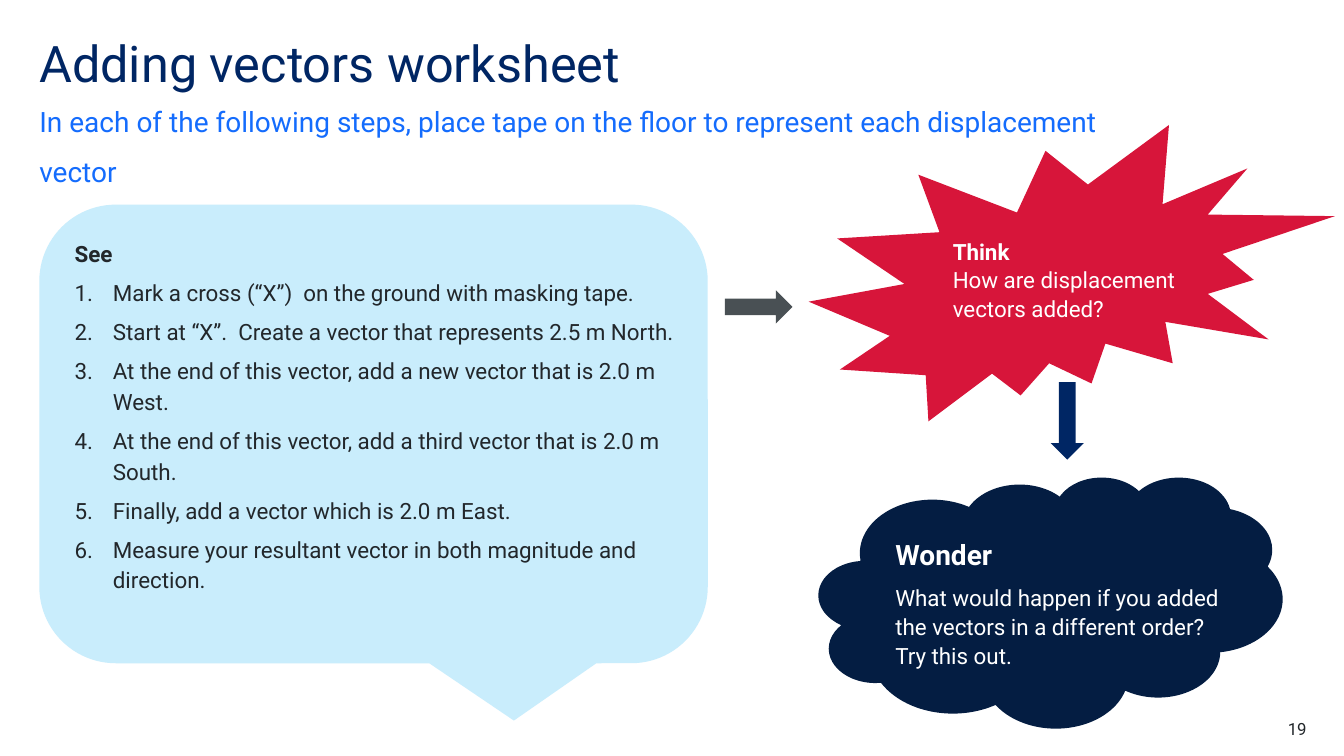
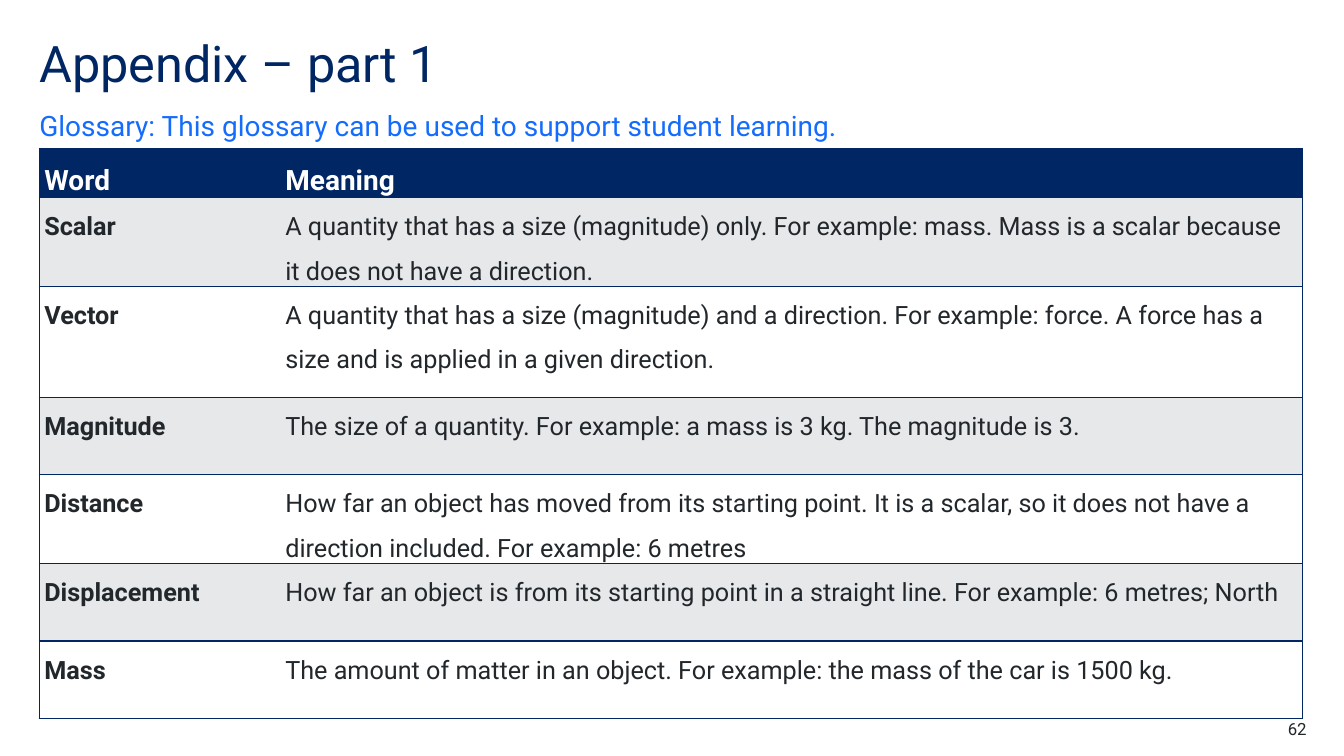
"""Build a vectors worksheet slide and a glossary slide."""
from lxml import etree
from pptx import Presentation
from pptx import util as u
from pptx.dml.color import RGBColor
from pptx.enum import shapes, text
from pptx.oxml import ns

PIXEL = 9144
FONT = "Roboto"
NAVY, BLUE, INK, WHITE = "002664", "146CFD", "22272B", "FFFFFF"
SKY, RED, MIDNIGHT, SLATE, GREY = "C9EDFC", "D7153A", "041D42", "495054", "E7E8EA"

STEPS = [
    "Mark a cross (“X”)  on the ground with masking tape.",
    "Start at “X”.  Create a vector that represents 2.5 m North.",
    "At the end of this vector, add a new vector that is 2.0 m West.",
    "At the end of this vector, add a third vector that is 2.0 m South.",
    "Finally, add a vector which is 2.0 m East.",
    "Measure your resultant vector in both magnitude and direction.",
]
GLOSSARY = [
    ("Word", "Meaning", 49),
    ("Scalar", "A quantity that has a size (magnitude) only. For example: mass. "
     "Mass is a scalar because it does not have a direction.", 88),
    ("Vector", "A quantity that has a size (magnitude) and a direction. For example: force. "
     "A force has a size and is applied in a given direction.", 110),
    ("Magnitude", "The size of a quantity. For example: a mass is 3 kg. The magnitude is 3.", 77),
    ("Distance", "How far an object has moved from its starting point. It is a scalar, "
     "so it does not have a direction included. For example: 6 metres", 88),
    ("Displacement", "How far an object is from its starting point in a straight line. "
     "For example: 6 metres; North", 77),
    ("Mass", "The amount of matter in an object. For example: the mass of the car is 1500 kg.", 77),
]


def px(length):
    """Turn px into EMU."""
    return u.Emu(length * PIXEL)


def place(box):
    """Turn a px box into EMU lengths."""
    return [px(length) for length in box]


def color(value):
    """Turn a hex string into a colour."""
    return RGBColor.from_string(value)


def paint(shape, fill):
    """Give a shape or cell a plain fill."""
    shape.fill.solid()
    shape.fill.fore_color.rgb = color(fill)


def prepare_frame(frame, anchor=text.MSO_ANCHOR.TOP):
    """Give a text frame no margins, wrapping and a fixed size."""
    frame.margin_left = frame.margin_right = frame.margin_top = frame.margin_bottom = 0
    frame.word_wrap = True
    frame.auto_size = text.MSO_AUTO_SIZE.NONE
    frame.vertical_anchor = anchor


def write(paragraph, content, size, ink, bold=False, line=1.0, after=0,
          align=text.PP_ALIGN.LEFT):
    """Fill a paragraph with one formatted run."""
    paragraph.alignment = align
    paragraph.line_spacing = line
    paragraph.space_before = u.Pt(0)
    paragraph.space_after = u.Pt(after)
    run = paragraph.add_run()
    run.text = content
    run.font.name = FONT
    run.font.size = u.Pt(size)
    run.font.bold = bold
    run.font.color.rgb = color(ink)


def set_bullet(paragraph, kind, indent=0, **attributes):
    """Set the hanging indent and the bullet element of a paragraph."""
    properties = paragraph._p.get_or_add_pPr()
    properties.set("marL", str(px(indent)))
    properties.set("indent", str(px(-indent)))
    etree.SubElement(properties, ns.qn(kind), attributes)


def add_text_box(parent, box, paragraphs):
    """Add a text box with paragraphs given as write options."""
    frame = parent.shapes.add_textbox(*place(box)).text_frame
    prepare_frame(frame)
    for index, options in enumerate(paragraphs):
        paragraph = frame.paragraphs[0] if index == 0 else frame.add_paragraph()
        options = dict(options)
        if options.pop("numbered", False):
            set_bullet(paragraph, "a:buAutoNum", 38, type="arabicPeriod")
        write(paragraph, **options)


def add_shape(parent, kind, box, fill):
    """Add a filled shape without line or shadow."""
    shape = parent.shapes.add_shape(kind, *place(box))
    paint(shape, fill)
    shape.line.fill.background()
    shape.shadow.inherit = False
    return shape


def add_base(presentation, title, subtitle, subtitle_box, number):
    """Add a slide with its title, subtitle and number."""
    slide = presentation.slides.add_slide(presentation.slide_layouts[1])
    heading, body = slide.placeholders
    heading.left, heading.top, heading.width, heading.height = place((39, 39, 1102, 60))
    prepare_frame(heading.text_frame)
    write(heading.text_frame.paragraphs[0], title, 36, NAVY, line=0.9)
    body.left, body.top, body.width, body.height = place(subtitle_box)
    prepare_frame(body.text_frame, text.MSO_ANCHOR.BOTTOM)
    paragraph = body.text_frame.paragraphs[0]
    set_bullet(paragraph, "a:buNone")
    write(paragraph, subtitle, 20, BLUE, line=1.5, after=12)
    add_text_box(slide, (1217, 713, 79, 20), [
        dict(content=number, size=12, ink=INK, align=text.PP_ALIGN.RIGHT)])
    return slide


def add_bubble(slide, kind, box, fill, inset, paragraphs, adjustments=()):
    """Add a grouped shape and text, with the text box inset in the shape's box."""
    group = slide.shapes.add_group_shape()
    shape = add_shape(group, kind, box, fill)
    for index, value in enumerate(adjustments):
        shape.adjustments[index] = value
    left, top, width, height = inset
    add_text_box(group, (box[0] + left, box[1] + top, width, height), paragraphs)


def add_worksheet(presentation):
    """Add the slide that leads from See through Think to Wonder."""
    slide = add_base(presentation, "Adding vectors worksheet",
                     "In each of the following steps, place tape on the floor "
                     "to represent each displacement vector", (39, 108, 1102, 79), "19")
    kinds = shapes.MSO_SHAPE
    see = dict(size=16, ink=INK, line=1.14, after=6)
    note = dict(size=16, ink=WHITE, line=1.07)
    add_bubble(slide, kinds.ROUNDED_RECTANGULAR_CALLOUT, (39, 203, 663, 455), SKY,
               (35, 32, 610, 374),
               [dict(see, content="See", bold=True)]
               + [dict(see, content=step, numbered=True) for step in STEPS], [0.21])
    add_shape(slide, kinds.RIGHT_ARROW, (719, 288, 67, 33), SLATE)
    add_bubble(slide, kinds.EXPLOSION2, (802, 124, 522, 294), RED, (143, 110, 267, 156), [
        dict(note, content="Think", bold=True),
        dict(note, content="How are displacement vectors added?", after=8)])
    add_shape(slide, kinds.RIGHT_ARROW, (1020, 401, 77, 33), NAVY).rotation = 90
    add_bubble(slide, kinds.CLOUD_CALLOUT, (812, 473, 460, 249), MIDNIGHT, (76, 58, 348, 156), [
        dict(note, content="Wonder", size=20, bold=True, after=8),
        dict(note, content="What would happen if you added the vectors in a different order?"),
        dict(note, content="Try this out.", after=8)], [0.08, 0.05])


def set_borders(cell, visible):
    """Draw the named sides of a cell in navy and clear the others."""
    properties = cell._tc.get_or_add_tcPr()
    for index, side in enumerate("LRTB"):
        line = etree.Element(ns.qn(f"a:ln{side}"), w=str(u.Pt(1)))
        if side in visible:
            fill = etree.SubElement(line, ns.qn("a:solidFill"))
            etree.SubElement(fill, ns.qn("a:srgbClr"), val=NAVY)
        else:
            etree.SubElement(line, ns.qn("a:noFill"))
        properties.insert(index, line)


def add_glossary_table(slide, box, column_widths):
    """Add the glossary table in the given box."""
    table = slide.shapes.add_table(len(GLOSSARY), 2, *place(box)).table
    table.horz_banding = False
    for column, width in zip(table.columns, column_widths):
        column.width = px(width)
    for row_index, (word, meaning, height) in enumerate(GLOSSARY):
        table.rows[row_index].height = px(height)
        header = row_index == 0
        fill = NAVY if header else GREY if row_index % 2 else WHITE
        for column_index, content in enumerate((word, meaning)):
            cell = table.cell(row_index, column_index)
            cell.margin_left = cell.margin_right = px(5)
            cell.margin_top = cell.margin_bottom = 0
            paint(cell, fill)
            set_borders(cell, "RTB" if column_index else "LTB")
            write(cell.text_frame.paragraphs[0], content, 20 if header else 18,
                  WHITE if header else INK, header or column_index == 0, 1.5)


def add_appendix(presentation):
    """Add the glossary slide."""
    slide = add_base(presentation, "Appendix – part 1",
                     "Glossary: This glossary can be used to support student learning.",
                     (39, 107, 1102, 34), "62")
    heights = sum(height for _, _, height in GLOSSARY)
    add_glossary_table(slide, (39, 147, 1253, heights), (239, 1014))


def main():
    """Build and save the presentation."""
    presentation = Presentation()
    presentation.slide_width, presentation.slide_height = px(1333), px(750)
    add_worksheet(presentation)
    add_appendix(presentation)
    presentation.save("out.pptx")


if __name__ == "__main__":
    main()
